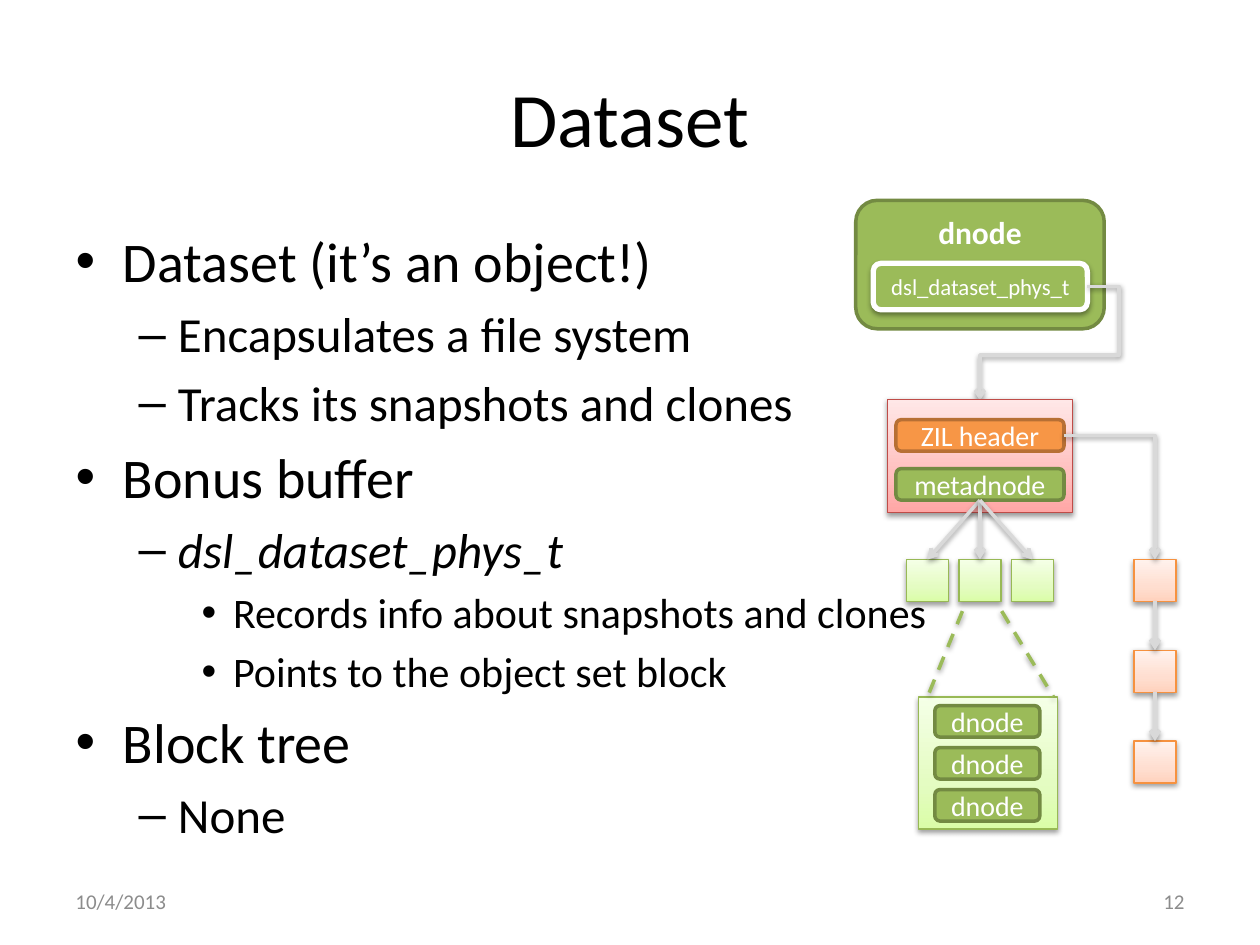
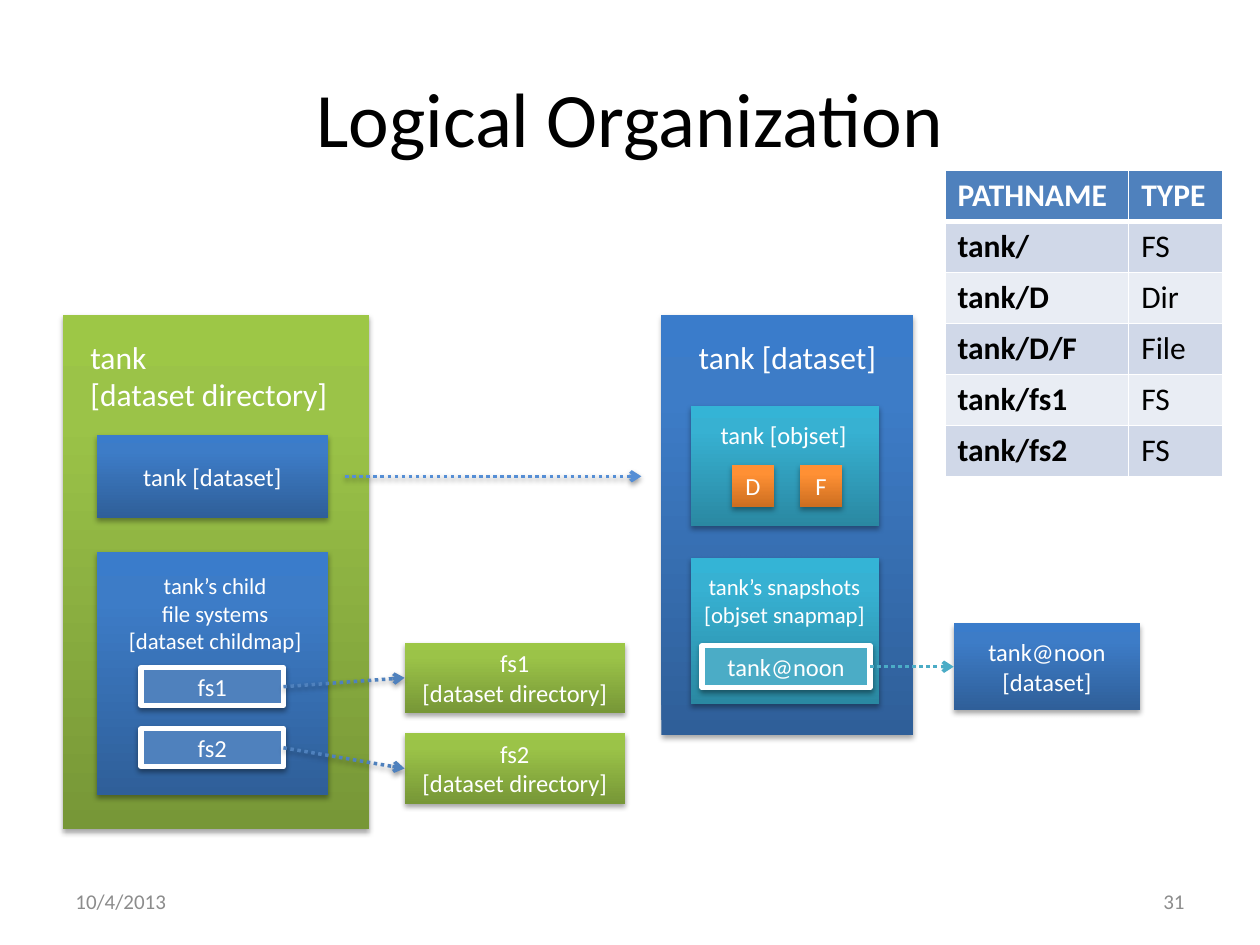
from lxml.etree import SubElement
from pptx import Presentation
from pptx.dml.color import RGBColor
from pptx.enum.dml import MSO_LINE
from pptx.enum.shapes import MSO_CONNECTOR as CONNECTOR, MSO_SHAPE as SHAPE
from pptx.enum.text import MSO_ANCHOR as ANCHOR, MSO_AUTO_SIZE as AUTO_SIZE, PP_ALIGN as ALIGN
from pptx.oxml.ns import qn
from pptx.util import Pt

FONT = "Calibri"
COLORS = {
    "black": "000000", "white": "FFFFFF", "footer": "8C8C8C", "arrow": "D9D9D9",
    "green": "9BBB59", "green_edge": "738A42", "pale_green_edge": "98B955",
    "orange": "F79646", "orange_edge": "B76F34", "pale_orange_edge": "F69240",
    "pink_edge": "BF4C48", "blue": "4F81BD", "light_blue": "558ED5", "teal": "4BACC6",
    "band_dark": "D0D8E8", "band_light": "E9EDF4",
}
# Stops run from the bottom of the shape to its top: (percent, colour).
GRADIENTS = {
    "pale_pink": [(0, "FFA6A5"), (35, "FFC0BF"), (100, "FFE7E7")],
    "pale_green": [(0, "DAFDA7"), (35, "E4FCC2"), (100, "F5FFE7")],
    "pale_orange": [(0, "FFD2BD"), (35, "FFDED0"), (100, "FFF2ED")],
    "deep_green": [(0, "779737"), (80, "9BC348"), (100, "9DC746")],
    "deep_blue": [(0, "2F5F99"), (80, "3D7CC7"), (100, "3A7CCB")],
    "deep_teal": [(0, "2A88A2"), (80, "37B1D2"), (100, "34B4D6")],
    "deep_orange": [(0, "CC6E20"), (80, "FF9034"), (100, "FF9136")],
}
# (opacity percent, distance in points)
SOFT_SHADOW = (38, 1.6)
DEEP_SHADOW = (35, 1.8)

BODY_SIZES = (32, 28, 24)
DATASET_POINTS = [
    (0, "Dataset (it’s an object!)"),
    (1, "Encapsulates a file system"),
    (1, "Tracks its snapshots and clones"),
    (0, "Bonus buffer"),
    (1, "dsl_dataset_phys_t"),
    (2, "Records info about snapshots and clones"),
    (2, "Points to the object set block"),
    (0, "Block tree"),
    (1, "None"),
]
PATHNAMES = [
    ("PATHNAME", "TYPE"), ("tank/", "FS"), ("tank/D", "Dir"),
    ("tank/D/F", "File"), ("tank/fs1", "FS"), ("tank/fs2", "FS"),
]


def rgb(name):
    return RGBColor.from_string(COLORS[name])


def place(shape, left, top, width, height):
    shape.left, shape.top, shape.width, shape.height = map(Pt, (left, top, width, height))


def add_run(paragraph, text, size, color="white", bold=False, italic=False):
    run = paragraph.add_run()
    run.text = text
    font = run.font
    font.name, font.size, font.bold, font.italic = FONT, Pt(size), bold, italic
    font.color.rgb = rgb(color)


def write_lines(frame, text, size, color="white", align=ALIGN.CENTER, anchor=ANCHOR.MIDDLE,
                bold=False):
    """Write each line of the text as a paragraph of its own."""
    frame.word_wrap = True
    frame.vertical_anchor = anchor
    for index, line in enumerate(text.split("\n")):
        paragraph = frame.add_paragraph() if index else frame.paragraphs[0]
        paragraph.alignment = align
        add_run(paragraph, line, size, color, bold)


def set_shadow(shape, shadow):
    """Replace the theme shadow; the line must already be set."""
    properties = shape._element.spPr
    effects = properties.find(qn("a:effectLst"))
    if effects is None:
        effects = SubElement(properties, qn("a:effectLst"))
    if shadow:
        opacity, distance = shadow
        outer = SubElement(effects, qn("a:outerShdw"), blurRad=str(Pt(3.1)),
                           dist=str(Pt(distance)), dir="5400000", rotWithShape="0")
        color = SubElement(outer, qn("a:srgbClr"), val=COLORS["black"])
        SubElement(color, qn("a:alpha"), val=str(opacity * 1000))


def set_gradient(shape, stops):
    shape.fill.gradient()
    shape.fill.gradient_angle = 90
    stop_list = shape._element.spPr.find(".//" + qn("a:gsLst"))
    for stop in list(stop_list):
        stop_list.remove(stop)
    for percent, color in stops:
        stop = SubElement(stop_list, qn("a:gs"), pos=str(percent * 1000))
        SubElement(stop, qn("a:srgbClr"), val=color)


def add_box(slide, box, fill, edge=None, edge_width=0.75, shadow=None, text="", size=14,
            kind=SHAPE.RECTANGLE, **text_style):
    shape = slide.shapes.add_shape(kind, *map(Pt, box))
    if fill in GRADIENTS:
        set_gradient(shape, GRADIENTS[fill])
    else:
        shape.fill.solid()
        shape.fill.fore_color.rgb = rgb(fill)
    if edge:
        shape.line.color.rgb = rgb(edge)
        shape.line.width = Pt(edge_width)
    else:
        shape.line.fill.background()
    shape.shadow.inherit = False
    set_shadow(shape, shadow)
    if text:
        write_lines(shape.text_frame, text, size, **text_style)
    return shape


def add_pale_box(slide, box, hue):
    return add_box(slide, box, "pale_" + hue, f"pale_{hue}_edge" if hue != "pink" else "pink_edge",
                   shadow=SOFT_SHADOW)


def add_deep_box(slide, box, hue, text=""):
    return add_box(slide, box, "deep_" + hue, shadow=DEEP_SHADOW, text=text)


def add_framed_box(slide, box, fill, text, size=14, kind=SHAPE.RECTANGLE):
    return add_box(slide, box, fill, "white", 3, SOFT_SHADOW, text, size, kind)


def add_pill(slide, box, text, hue="green", size=16, **text_style):
    return add_box(slide, box, hue, hue + "_edge", 2, text=text, size=size,
                   kind=SHAPE.ROUNDED_RECTANGLE, **text_style)


def add_label(slide, box, text, size, align=ALIGN.CENTER, anchor=ANCHOR.TOP, color="white"):
    label = slide.shapes.add_textbox(*map(Pt, box))
    write_lines(label.text_frame, text, size, color, align, anchor)


def add_line(slide, start, end, color, dash=None, arrow=True, shadow=SOFT_SHADOW,
             kind=CONNECTOR.STRAIGHT):
    connector = slide.shapes.add_connector(kind, *map(Pt, start + end))
    connector.line.color.rgb = rgb(color)
    connector.line.width = Pt(2)
    if dash:
        connector.line.dash_style = dash
    if arrow:
        SubElement(connector.line._get_or_add_ln(), qn("a:tailEnd"), type="arrow")
    set_shadow(connector, shadow)
    return connector


def join(slide, source, source_side, target, target_side, color, **line_style):
    connector = add_line(slide, (0, 0), (0, 0), color, **line_style)
    connector.begin_connect(source, source_side)
    connector.end_connect(target, target_side)


def add_elbow(slide, start, end, preset, adjustments=()):
    """Draw a bent arrow; adjustments are fractions of its width and height."""
    connector = add_line(slide, start, end, "arrow", kind=CONNECTOR.ELBOW)
    geometry = connector._element.spPr.find(qn("a:prstGeom"))
    geometry.set("prst", preset)
    guides = geometry.find(qn("a:avLst"))
    if guides is None:
        guides = SubElement(geometry, qn("a:avLst"))
    for number, value in enumerate(adjustments, 1):
        SubElement(guides, qn("a:gd"), name=f"adj{number}", fmla=f"val {round(value * 100000)}")


def start_slide(presentation, layout_index, title, number):
    slide = presentation.slides.add_slide(presentation.slide_layouts[layout_index])
    place(slide.shapes.title, 36, 21.6, 648, 90)
    write_lines(slide.shapes.title.text_frame, title, 44, "black")
    for left, text, align in ((36, "10/4/2013", ALIGN.LEFT), (516, number, ALIGN.RIGHT)):
        add_label(slide, (left, 500.5, 168, 28.75), text, 12, align, ANCHOR.MIDDLE, "footer")
    return slide


def fill_body(body, points):
    place(body, 36, 126, 648, 356.4)
    frame = body.text_frame
    frame.auto_size = AUTO_SIZE.NONE
    for index, (level, text) in enumerate(points):
        paragraph = frame.add_paragraph() if index else frame.paragraphs[0]
        paragraph.level = level
        add_run(paragraph, text, BODY_SIZES[level], "black", italic=text.endswith("phys_t"))


def set_borders(cell, bottom_width):
    properties = cell._tc.get_or_add_tcPr()
    for side, width in (("L", 1), ("R", 1), ("T", 1), ("B", bottom_width)):
        line = SubElement(properties, qn("a:ln" + side), w=str(Pt(width)))
        solid = SubElement(line, qn("a:solidFill"))
        SubElement(solid, qn("a:srgbClr"), val=COLORS["white"])


def add_pathname_table(slide):
    row_height = 29.2
    frame = slide.shapes.add_table(len(PATHNAMES), 2, Pt(540), Pt(97.2), Pt(159),
                                   Pt(row_height * len(PATHNAMES)))
    table = frame.table
    for column, width in zip(table.columns, (105, 54)):
        column.width = Pt(width)
    for row_index, values in enumerate(PATHNAMES):
        header = row_index == 0
        fill = "blue" if header else "band_dark" if row_index % 2 else "band_light"
        for column_index, value in enumerate(values):
            cell = table.cell(row_index, column_index)
            set_borders(cell, 3 if header or False else 1)
            cell.fill.solid()
            cell.fill.fore_color.rgb = rgb(fill)
            add_run(cell.text_frame.paragraphs[0], value, 18, "white" if header else "black",
                    bold=header or column_index == 0)


def build_dataset_slide(presentation):
    slide = start_slide(presentation, 1, "Dataset", "12")
    fill_body(slide.placeholders[1], DATASET_POINTS)

    add_pill(slide, (489, 114.5, 142, 73.4), "dnode", size=18, bold=True, anchor=ANCHOR.TOP)
    add_framed_box(slide, (499, 150.5, 122.4, 26.6), "green", "dsl_dataset_phys_t", 13,
                   SHAPE.ROUNDED_RECTANGLE)
    add_elbow(slide, (621.4, 163.6), (560, 229), "bentConnector4", (-0.294, 0.601))

    add_pale_box(slide, (507, 228.2, 106, 64.8), "pink")
    metadnode = add_pill(slide, (512, 267.8, 96, 18), "metadnode")
    add_pill(slide, (512, 239.8, 96, 18), "ZIL header", "orange")

    for index in range(3):
        block = add_pale_box(slide, (518 + 30 * index, 319.7, 24, 24), "green")
        join(slide, metadnode, 2, block, 0, "arrow")
    add_pale_box(slide, (525, 398.2, 79.2, 75.6), "green")
    for index in range(3):
        add_pill(slide, (534.2, 403.2 + 24 * index, 60, 18), "dnode")
    for start_x, end_x in ((572.4, 602), (550, 530)):
        add_line(slide, (start_x, 349.2), (end_x, 398.2), "green", MSO_LINE.DASH, arrow=False)

    log_blocks = [add_pale_box(slide, (648, 319.7 + 51.9 * index, 24, 24), "orange")
                  for index in range(3)]
    add_elbow(slide, (608, 248.8), (660, 319.7), "bentConnector2")
    for upper, lower in zip(log_blocks, log_blocks[1:]):
        join(slide, upper, 2, lower, 0, "arrow")


def build_organization_slide(presentation):
    slide = start_slide(presentation, 5, "Logical Organization", "31")
    dots = MSO_LINE.ROUND_DOT

    add_deep_box(slide, (36, 180, 175, 293.8), "green")
    add_label(slide, (44.6, 189.4, 156.2, 51), "tank\n[dataset directory]", 18, ALIGN.LEFT)
    add_deep_box(slide, (55.4, 248.4, 132, 47.5), "blue", "tank [dataset]")
    add_deep_box(slide, (55.4, 315.4, 132, 139), "blue")
    add_label(slide, (62, 323.3, 121.7, 54.7),
              "tank’s child\nfile systems\n[dataset childmap]", 13)
    for index, name in enumerate(("fs1", "fs2")):
        entry = add_framed_box(slide, (80.6, 381.6 + 34.9 * index, 81.4, 21.6), "blue", name)
        directory = add_deep_box(slide, (231.2, 367.2 + 51.8 * index, 126, 40.3), "green",
                                 name + "\n[dataset directory]")
        join(slide, entry, 3, directory, 1, "blue", dash=dots)

    add_deep_box(slide, (378, 180, 144, 239.8), "blue")
    add_label(slide, (378, 189.4, 144, 28.8), "tank [dataset]", 18)
    add_deep_box(slide, (394.6, 231.8, 108, 69), "teal")
    add_label(slide, (386.6, 236.2, 122.4, 24.5), "tank [objset]", 14)
    for left, name in ((418.3, "D"), (457.2, "F")):
        add_deep_box(slide, (left, 265.8, 24, 24), "orange", name)
    add_deep_box(slide, (394.6, 319, 108, 83.5), "teal")
    add_label(slide, (391.7, 324, 113, 70.6), "tank’s snapshots\n[objset snapmap]", 13)
    snapshot = add_framed_box(slide, (401.2, 369, 96, 24), "teal", "tank@noon")
    snapshot_dataset = add_deep_box(slide, (545, 356.2, 106.6, 49.6), "blue",
                                    "tank@noon\n[dataset]")
    join(slide, snapshot, 3, snapshot_dataset, 1, "teal", dash=dots, shadow=None)
    add_line(slide, (197.3, 272.2), (366.5, 272.2), "light_blue", dots)

    add_pathname_table(slide)


def main():
    presentation = Presentation()
    presentation.slide_width, presentation.slide_height = Pt(720), Pt(540)
    build_dataset_slide(presentation)
    build_organization_slide(presentation)
    presentation.save("out.pptx")


if __name__ == "__main__":
    main()
